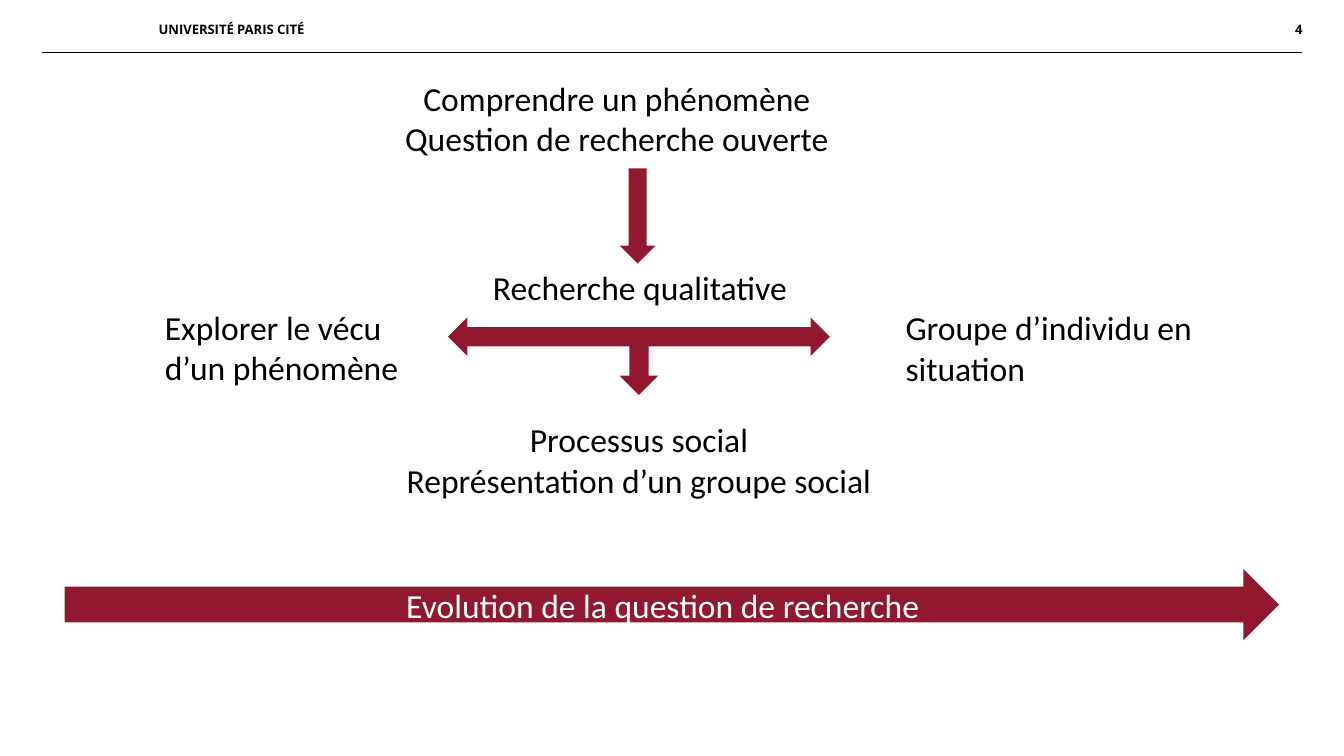
from lxml import etree
from pptx import Presentation
from pptx.dml.color import RGBColor
from pptx.enum.shapes import MSO_CONNECTOR, MSO_SHAPE as SHAPE
from pptx.enum.text import MSO_ANCHOR as ANCHOR, MSO_AUTO_SIZE as AUTO, PP_ALIGN as ALIGN
from pptx.oxml.ns import qn
from pptx.util import Pt

COLORS = {"ink": "000000", "white": "FFFFFF", "burgundy": "921830"}
LEFT, CENTER, RIGHT = ALIGN.LEFT, ALIGN.CENTER, ALIGN.RIGHT

# Content: text and box as left, top, width, height in points
HEADER = [
    ("UNIVERSITÉ PARIS CITÉ", (85, 7.2, 136, 17.3), LEFT),
    ("4", (598.3, 7.2, 99.4, 17.3), RIGHT),
]
HEADER_RULE = (22.5, 28.1, 697.5)  # left, top, right
LABELS = [
    (["Comprendre un phénomène ", "Question de recherche ouverte "],
     (152.6, 38.2, 360, 51), CENTER),
    (["Recherche qualitative "], (236.2, 139.7, 217.4, 29), CENTER),
    (["Explorer le vécu d’un phénomène"], (81.2, 160.6, 143.3, 51), LEFT),
    (["Processus social", "Représentation d’un groupe social"],
     (201.6, 221, 281.5, 51), CENTER),
    (["Groupe d’individu en situation"], (478, 161, 190.8, 51), LEFT),
]
ARROWS = [  # preset, box, rotation, text
    (SHAPE.DOWN_ARROW, (332, 90.2, 19.2, 51), 0, None),
    (SHAPE.LEFT_RIGHT_UP_ARROW, (240, 170, 204.6, 41.6), 180, None),
    (SHAPE.RIGHT_ARROW, (34.6, 304.8, 650.6, 38.2), 0,
     "Evolution de la question de recherche"),
]


def rgb(name):
    return RGBColor.from_string(COLORS[name])


def write(sp, lines, size=18, font="Calibri", color="ink", bold=False,
          align=LEFT, anchor=ANCHOR.TOP, inset=None, fit=AUTO.NONE):
    tf = sp.text_frame
    tf.word_wrap = True
    tf.auto_size = fit
    tf.vertical_anchor = anchor
    if inset is not None:
        tf.margin_left = tf.margin_right = tf.margin_top = tf.margin_bottom = Pt(inset)
    for i, line in enumerate(lines):
        p = tf.add_paragraph() if i else tf.paragraphs[0]
        p.alignment = align
        r = p.add_run()
        r.text = line
        r.font.size, r.font.name, r.font.bold = Pt(size), font, bold
        r.font.color.rgb = rgb(color)


prs = Presentation()
prs.slide_width, prs.slide_height = Pt(720), Pt(405)
s = prs.slides.add_slide(prs.slide_layouts[6])

# Header rule and texts
left, top, right = HEADER_RULE
rule = s.shapes.add_connector(MSO_CONNECTOR.STRAIGHT, Pt(left), Pt(top), Pt(right), Pt(top))
rule.line.color.rgb = rgb("ink")
rule.line.width = Pt(0.25)
etree.SubElement(rule._element.spPr, qn("a:effectLst"))
for text, box, align in HEADER:
    write(s.shapes.add_textbox(*map(Pt, box)), [text], size=7, font="Open Sans",
          bold=True, align=align, anchor=ANCHOR.MIDDLE, inset=0)

# Arrows
for preset, box, rotation, text in ARROWS:
    sp = s.shapes.add_shape(preset, *map(Pt, box))
    sp.rotation = rotation
    sp.shadow.inherit = False
    sp.fill.solid()
    sp.fill.fore_color.rgb = rgb("burgundy")
    sp.line.fill.background()
    if text:
        write(sp, [text], color="white", align=CENTER, anchor=ANCHOR.MIDDLE)

# Labels around the arrows
for lines, box, align in LABELS:
    write(s.shapes.add_textbox(*map(Pt, box)), lines, align=align,
          fit=AUTO.SHAPE_TO_FIT_TEXT)

prs.save("out.pptx")
